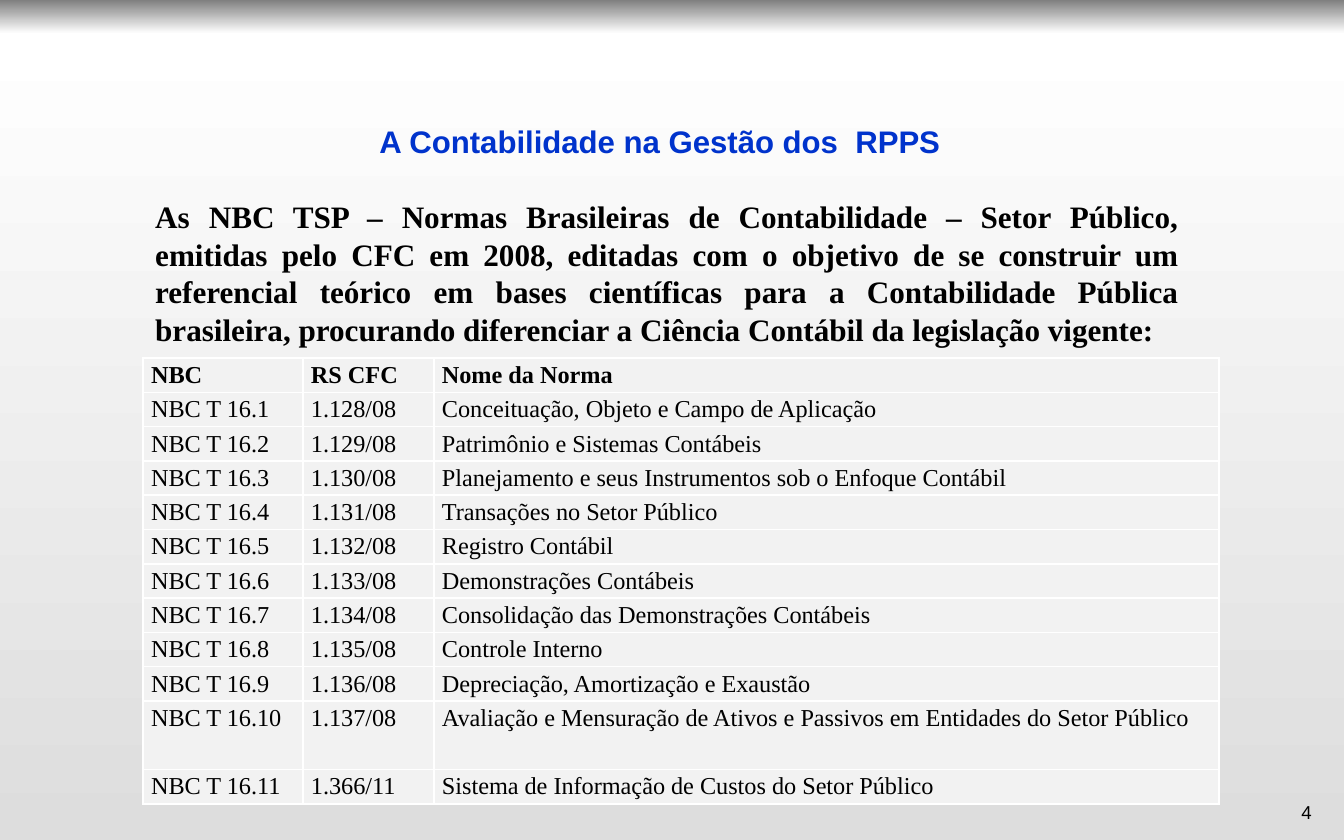
from copy import deepcopy
from pptx import Presentation
from pptx import util as u
from pptx.dml.color import RGBColor
from pptx.enum import text
from pptx.oxml import parse_xml
from pptx.oxml.ns import nsdecls, qn

SCALE = 914400 / 134.4


def px(n):
    return u.Emu(round(n * SCALE))


def style(par, size, face, color="000000", bold=False, align=text.PP_ALIGN.LEFT):
    par.alignment = align
    font = par.font
    font.size, font.name, font.bold = u.Pt(size), face, bold
    font.color.rgb = RGBColor.from_string(color)


prs = Presentation()
prs.slide_width, prs.slide_height = px(1344), px(840)
slide = prs.slides.add_slide(prs.slide_layouts[5])

# Background: grey band fading to white, then to light grey
fill = slide.background.fill
fill.gradient()
fill.gradient_angle = 270
stops = slide.element.find(".//" + qn("a:gsLst"))
stops.append(deepcopy(stops[-1]))
shades = [(0, "808080"), (0.04, "FFFFFF"), (1, "DDDDDD")]
for stop, (pos, shade) in zip(fill.gradient_stops, shades):
    stop.position = pos
    stop.color.rgb = RGBColor.from_string(shade)

# Title
title = slide.shapes.title
title.left, title.top, title.width, title.height = px(171), px(116), px(978), px(51)
frame = title.text_frame
frame.auto_size = text.MSO_AUTO_SIZE.NONE
frame.text = "A Contabilidade na Gestão dos  RPPS"
style(frame.paragraphs[0], 16.7, "Arial", "0033CC", True, text.PP_ALIGN.CENTER)

# Introduction
intro = slide.shapes.add_textbox(px(142), px(191), px(1050), px(164))
frame = intro.text_frame
frame.word_wrap = True
frame.text = (
    "As NBC TSP – Normas Brasileiras de Contabilidade – Setor Público, "
    "emitidas pelo CFC em 2008, editadas com o objetivo de se construir um "
    "referencial teórico em bases científicas para a Contabilidade Pública "
    "brasileira, procurando diferenciar a Ciência Contábil da legislação vigente:"
)
style(frame.paragraphs[0], 16.7, "Times New Roman", bold=True,
      align=text.PP_ALIGN.JUSTIFY)

# Table of standards
rows = [
    ("NBC", "RS CFC", "Nome da Norma"),
    ("NBC T 16.1", "1.128/08", "Conceituação, Objeto e Campo de Aplicação"),
    ("NBC T 16.2", "1.129/08", "Patrimônio e Sistemas Contábeis"),
    ("NBC T 16.3", "1.130/08", "Planejamento e seus Instrumentos sob o Enfoque Contábil"),
    ("NBC T 16.4", "1.131/08", "Transações no Setor Público"),
    ("NBC T 16.5", "1.132/08", "Registro Contábil"),
    ("NBC T 16.6", "1.133/08", "Demonstrações Contábeis"),
    ("NBC T 16.7", "1.134/08", "Consolidação das Demonstrações Contábeis"),
    ("NBC T 16.8", "1.135/08", "Controle Interno"),
    ("NBC T 16.9", "1.136/08", "Depreciação, Amortização e Exaustão"),
    ("NBC T 16.10", "1.137/08",
     "Avaliação e Mensuração de Ativos e Passivos em Entidades do Setor Público"),
    ("NBC T 16.11", "1.366/11", "Sistema de Informação de Custos do Setor Público"),
]
TALL = 10  # this row is two units high
unit = 446 / (len(rows) + 1)
table = slide.shapes.add_table(
    len(rows), 3, px(143), px(358), px(1076), px(446)).table
for col, width in zip(table.columns, (160, 131, 785)):
    col.width = px(width)
for r, row in enumerate(rows):
    table.rows[r].height = px(unit * (2 if r == TALL else 1))
    for c, word in enumerate(row):
        cell = table.cell(r, c)
        cell.margin_left = cell.margin_right = px(8)
        cell.margin_top = cell.margin_bottom = 0
        props = cell._tc.get_or_add_tcPr()
        for side in ("lnL", "lnR", "lnT", "lnB"):
            props.append(parse_xml(
                f'<a:{side} {nsdecls("a")} w="12700"><a:solidFill>'
                f'<a:srgbClr val="FFFFFF"/></a:solidFill></a:{side}>'))
        cell.fill.solid()
        cell.fill.fore_color.rgb = RGBColor.from_string("F2F2F2")
        cell.text = word
        par = cell.text_frame.paragraphs[0]
        par.line_spacing = 1.15
        par.space_after = u.Pt(10)
        style(par, 13, "Times New Roman", bold=r == 0)

# Slide number
number = slide.shapes.add_textbox(px(1292), px(801), px(29), px(23))
frame = number.text_frame
frame.margin_left = frame.margin_right = frame.margin_top = frame.margin_bottom = 0
frame.word_wrap = False
frame.text = "4"
style(frame.paragraphs[0], 10, "Arial", align=text.PP_ALIGN.CENTER)

prs.save("out.pptx")
